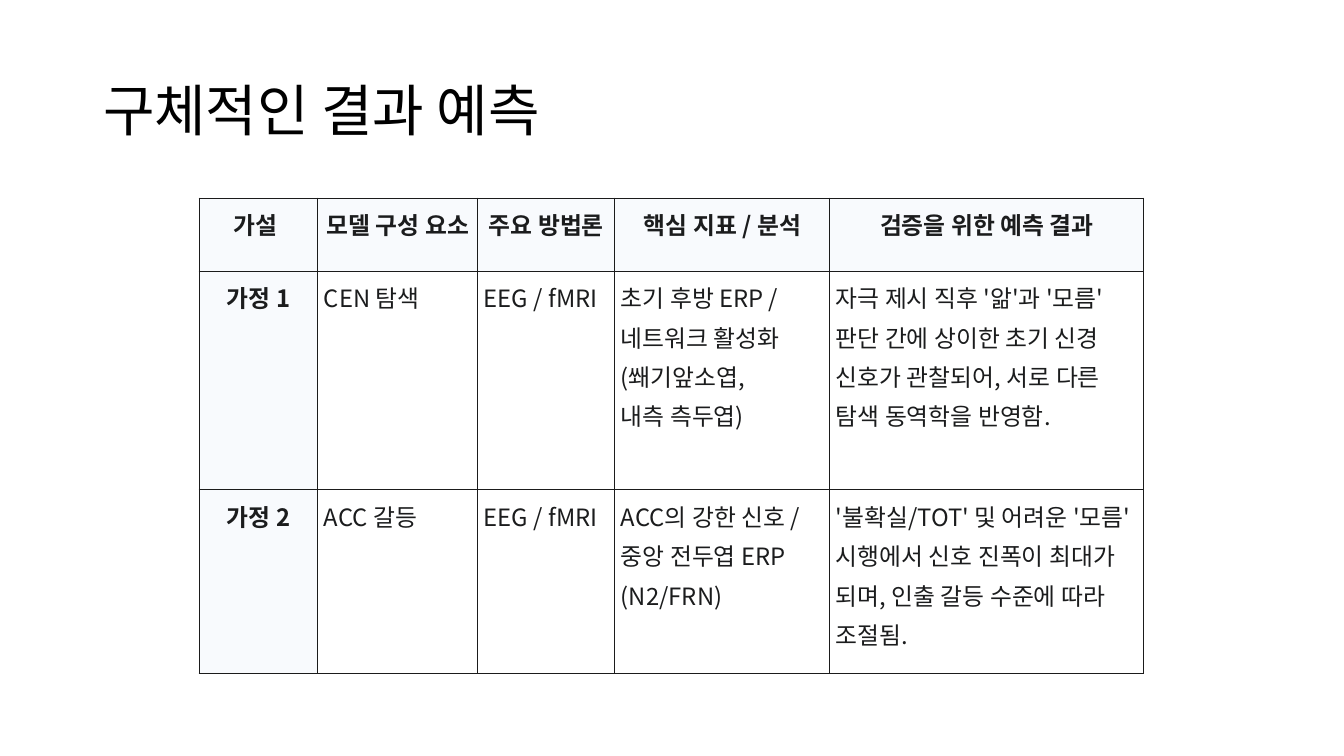
from lxml import etree
from pptx import Presentation
from pptx.dml.color import RGBColor
from pptx.enum.text import MSO_ANCHOR, PP_ALIGN
from pptx.oxml.ns import qn
from pptx.util import Pt

PX = 914400 / 100.8
FONT = "Noto Sans CJK KR"
BLACK = RGBColor(0x00, 0x00, 0x00)
INK = RGBColor(0x1B, 0x1C, 0x1D)
BORDER = RGBColor(0x1B, 0x1B, 0x1B)
HEADING_FILL = RGBColor(0xF8, 0xFA, 0xFD)

TITLE = "구체적인 결과 예측"
COL_WIDTHS = [119, 160, 137, 215, 314]
ROW_HEIGHTS = [73, 219, 184]
ROWS = [
    ["가설 ", "모델 구성 요소", "주요 방법론", "핵심 지표 / 분석",
     "검증을 위한 예측 결과"],
    ["가정 1", "CEN 탐색", "EEG / fMRI",
     "초기 후방 ERP / 네트워크 활성화 (쐐기앞소엽, \n내측 측두엽)",
     "자극 제시 직후 '앎'과 '모름' 판단 간에 상이한 초기 신경 신호가 관찰되어, "
     "서로 다른 탐색 동역학을 반영함."],
    ["가정 2", "ACC 갈등", "EEG / fMRI",
     "ACC의 강한 신호 / 중앙 전두엽 ERP (N2/FRN)",
     "'불확실/TOT' 및 어려운 '모름' 시행에서 신호 진폭이 최대가 되며, "
     "인출 갈등 수준에 따라 조절됨."],
]
CELL_MARGINS = {"margin_left": 6, "margin_right": 6,
                "margin_top": 4, "margin_bottom": 4}
CELL_SPACING = {"line_spacing": 1.14, "space_before": Pt(12),
                "space_after": Pt(12)}


def px(n):
    return round(n * PX)


def set_attrs(target, values):
    for name, value in values.items():
        setattr(target, name, value)


def write_text(p, text, size, color, bold=False):
    p.text = text
    for r in p.runs:
        set_attrs(r.font, {"name": FONT, "size": Pt(size), "bold": bold})
        r.font.color.rgb = color
        ea = etree.SubElement(r.font._element, qn("a:ea"))
        ea.set("typeface", FONT)


def add_title(s):
    title = s.shapes.title
    set_attrs(title, {"left": px(93), "top": px(40),
                      "width": px(1159), "height": px(146)})
    tf = title.text_frame
    tf.vertical_anchor = MSO_ANCHOR.MIDDLE
    p = tf.paragraphs[0]
    set_attrs(p, {"alignment": PP_ALIGN.LEFT, "line_spacing": 0.9})
    write_text(p, TITLE, 40, BLACK)


def add_borders(cell):
    """Draw the four sides; they must precede the fill in the cell properties."""
    tc_pr = cell._tc.get_or_add_tcPr()
    for i, side in enumerate(("lnL", "lnR", "lnT", "lnB")):
        ln = etree.Element(qn(f"a:{side}"), w=str(Pt(0.75)))
        fill = etree.SubElement(ln, qn("a:solidFill"))
        etree.SubElement(fill, qn("a:srgbClr"), val=str(BORDER))
        tc_pr.insert(i, ln)


def fill_cell(cell, text, heading):
    set_attrs(cell, {name: px(n) for name, n in CELL_MARGINS.items()})
    if heading:
        cell.fill.solid()
        cell.fill.fore_color.rgb = HEADING_FILL
    else:
        cell.fill.background()
    add_borders(cell)
    p = cell.text_frame.paragraphs[0]
    set_attrs(p, CELL_SPACING)
    p.alignment = PP_ALIGN.CENTER if heading else PP_ALIGN.LEFT
    write_text(p, text, 17, INK, bold=heading)


def add_prediction_table(s):
    frame = s.shapes.add_table(len(ROWS), len(COL_WIDTHS), px(199), px(198),
                               px(sum(COL_WIDTHS)), px(sum(ROW_HEIGHTS)))
    table = frame.table
    set_attrs(table, {"first_row": False, "horz_banding": False})
    for column, width in zip(table.columns, COL_WIDTHS):
        column.width = px(width)
    for row, height in zip(table.rows, ROW_HEIGHTS):
        row.height = px(height)
    for i, texts in enumerate(ROWS):
        for j, text in enumerate(texts):
            fill_cell(table.cell(i, j), text, heading=i == 0 or j == 0)


def main():
    prs = Presentation()
    prs.slide_width, prs.slide_height = px(1344), px(756)
    s = prs.slides.add_slide(prs.slide_layouts[5])
    add_title(s)
    add_prediction_table(s)
    prs.save("out.pptx")


if __name__ == "__main__":
    main()
